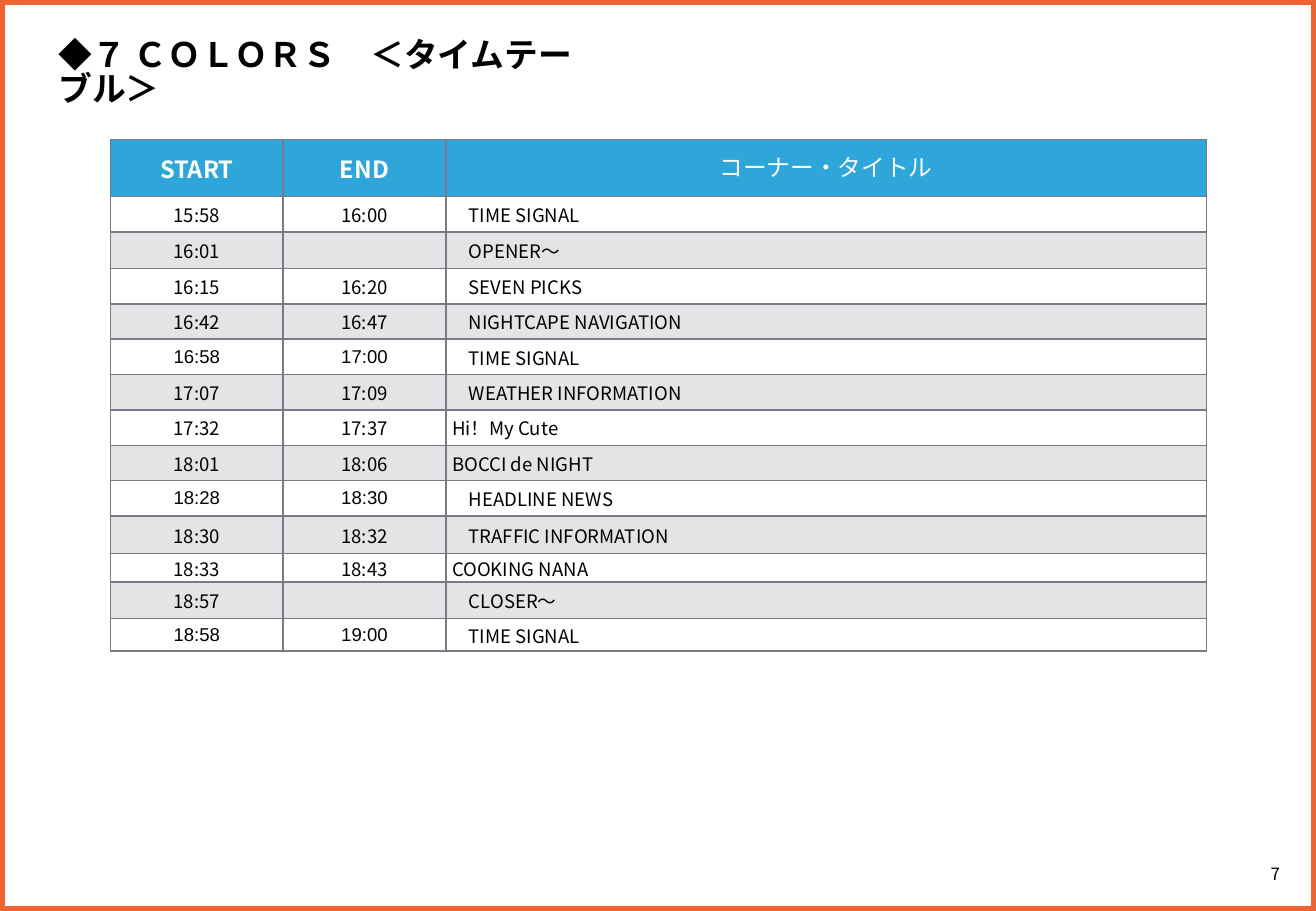
from pptx import Presentation
from pptx.enum import shapes, text
from pptx.dml.color import RGBColor
from pptx.oxml import parse_xml
from pptx.oxml.ns import nsdecls
from pptx.util import Cm, Pt

COLORS = {"frame": "EB6432", "header": "2EA6DA", "grid": "797B84",
          "black": "000000", "white": "FFFFFF"}
SANS = "Noto Sans CJK JP"
CENTER = text.PP_ALIGN.CENTER
WIDE, NARROW = 0.48, 0.13  # left indents of the corner titles


def write(frame, words, size=11, font=SANS, color="black", bold=False,
          align=text.PP_ALIGN.LEFT, spacing=None):
    para = frame.paragraphs[0]
    para.alignment = align
    if spacing:
        para.line_spacing = spacing
    span = para.add_run()
    span.text = words
    span.font.size = Pt(size)
    span.font.bold = bold
    span.font.color.rgb = RGBColor.from_string(COLORS[color])
    span.font.name = font
    span.font._element.append(
        parse_xml(f'<a:ea {nsdecls("a")} typeface="{font}"/>'))


def style_cell(cell, fill=None, alpha=100):
    """Set the grid lines and the fill, clear without a fill colour."""
    props = cell._tc.get_or_add_tcPr()
    for side in ("lnL", "lnR", "lnT", "lnB"):
        props.append(parse_xml(
            f'<a:{side} {nsdecls("a")} w="12700"><a:solidFill>'
            f'<a:srgbClr val="{COLORS["grid"]}"/></a:solidFill></a:{side}>'))
    paint = "<a:noFill {0}/>" if fill is None else (
        '<a:solidFill {0}><a:srgbClr val="' + COLORS[fill] +
        f'"><a:alpha val="{alpha * 1000}"/></a:srgbClr></a:solidFill>')
    props.append(parse_xml(paint.format(nsdecls("a"))))
    cell.vertical_anchor = text.MSO_ANCHOR.MIDDLE
    cell.margin_left = cell.margin_right = Cm(0)
    cell.margin_top = cell.margin_bottom = Cm(0)


deck = Presentation()
deck.slide_width, deck.slide_height = Cm(27.51), Cm(19.05)
page = deck.slides.add_slide(deck.slide_layouts[6])

# Page frame and number
border = page.shapes.add_shape(shapes.MSO_SHAPE.RECTANGLE, 0, 0,
                               deck.slide_width, deck.slide_height)
border.shadow.inherit = False
border.fill.background()
border.line.color.rgb = RGBColor.from_string(COLORS["frame"])
border.line.width = Pt(6)

number = page.shapes.add_textbox(Cm(25.81), Cm(17.83), Cm(1.7), Cm(0.89))
number.text_frame.word_wrap = True
number.text_frame.vertical_anchor = text.MSO_ANCHOR.MIDDLE
write(number.text_frame, "7", size=10, align=CENTER)

# Timetable: start, end, corner title, indent, font of the times, row height
schedule = [
    ("15:58", "16:00", "TIME SIGNAL", WIDE, SANS, 0.74),
    ("16:01", "", "OPENER〜", WIDE, SANS, 0.68),
    ("16:15", "16:20", "SEVEN PICKS", WIDE, SANS, 0.74),
    ("16:42", "16:47", "NIGHTCAPE NAVIGATION", WIDE, SANS, 0.74),
    ("16:58", "17:00", "TIME SIGNAL", WIDE, "Arial", 0.74),
    ("17:07", "17:09", "WEATHER INFORMATION", WIDE, SANS, 0.74),
    ("17:32", "17:37", "Hi！My Cute", NARROW, SANS, 0.74),
    ("18:01", "18:06", "BOCCI de NIGHT", NARROW, SANS, 0.74),
    ("18:28", "18:30", "HEADLINE NEWS", WIDE, "Arial", 0.74),
    ("18:30", "18:32", "TRAFFIC INFORMATION", WIDE, SANS, 0.78),
    ("18:33", "18:43", "COOKING NANA", NARROW, SANS, 0.6),
    ("18:57", "", "CLOSER〜", WIDE, SANS, 0.6),
    ("18:58", "19:00", "TIME SIGNAL", WIDE, "Arial", 0.68),
]
table = page.shapes.add_table(len(schedule) + 1, 3, Cm(2.31), Cm(2.92),
                              Cm(22.91), Cm(10.46)).table
table.horz_banding = False
for column, width in zip(table.columns, (3.61, 3.4, 15.9)):
    column.width = Cm(width)

table.rows[0].height = Cm(1.19)
headings = (("START", SANS, True), ("END", SANS, True),
            ("コーナー・タイトル", "Arial", False))
for col, (heading, font, bold) in enumerate(headings):
    cell = table.cell(0, col)
    style_cell(cell, "header")
    write(cell.text_frame, heading, size=14, font=font, color="white",
          bold=bold, align=CENTER)

for row, (start, end, title, indent, font, height) in enumerate(schedule, 1):
    table.rows[row].height = Cm(height)
    for col, words in enumerate((start, end, title)):
        cell = table.cell(row, col)
        style_cell(cell, "grid" if row % 2 == 0 else None, alpha=20)
        if col == 2:
            cell.margin_left = Cm(indent)
            write(cell.text_frame, words)
        else:
            write(cell.text_frame, words, font=font, align=CENTER)

# Title
heading_box = page.shapes.add_textbox(Cm(0.97), Cm(0.74), Cm(11.81), Cm(1.12))
heading_box.text_frame.word_wrap = True
heading_box.text_frame.auto_size = text.MSO_AUTO_SIZE.SHAPE_TO_FIT_TEXT
write(heading_box.text_frame, "◆", size=20, spacing=0.82)
write(heading_box.text_frame, "７ ＣＯＬＯＲＳ　＜タイムテーブル＞", size=20,
      bold=True, spacing=0.82)

deck.save("out.pptx")
